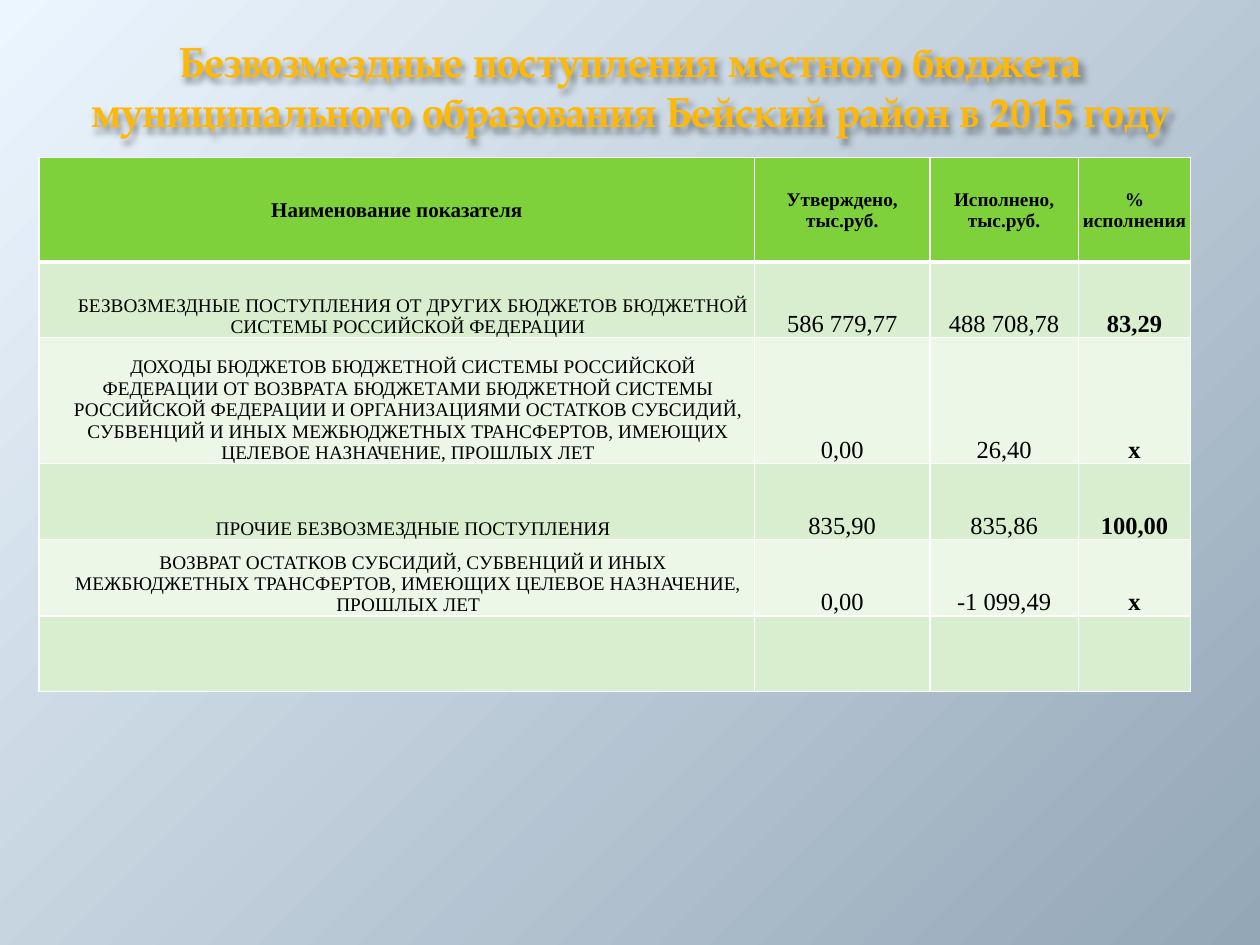
from lxml import etree
from pptx import Presentation
from pptx.dml.color import RGBColor
from pptx.enum.text import MSO_ANCHOR, PP_ALIGN
from pptx.oxml import parse_xml
from pptx.oxml.ns import nsdecls, qn
from pptx.util import Inches, Pt

CENTER = PP_ALIGN.CENTER
TOP, MIDDLE, BOTTOM = MSO_ANCHOR.TOP, MSO_ANCHOR.MIDDLE, MSO_ANCHOR.BOTTOM
BLACK = RGBColor(0x00, 0x00, 0x00)
WHITE = RGBColor(0xFF, 0xFF, 0xFF)
OUTLINE = RGBColor(0xFE, 0xFE, 0xFE)
GOLD = RGBColor(0xFE, 0xB8, 0x0A)
HEADER_GREEN = RGBColor(0x7F, 0xD1, 0x3B)
BAND_GREENS = (RGBColor(0xD8, 0xEE, 0xCE), RGBColor(0xEC, 0xF7, 0xE8))
SKY = RGBColor(0xEC, 0xF6, 0xFF)
SLATE = RGBColor(0x94, 0xA7, 0xB7)
TITLE_FONT, TABLE_FONT = "TeX Gyre Pagella", "Times New Roman"

TITLE = "Безвозмездные поступления местного бюджета муниципального образования Бейский район в 2015 году"
ROWS = [
    ("Наименование показателя", "Утверждено, тыс.руб.", "Исполнено, тыс.руб.", "% исполнения"),
    ("БЕЗВОЗМЕЗДНЫЕ ПОСТУПЛЕНИЯ ОТ ДРУГИХ БЮДЖЕТОВ БЮДЖЕТНОЙ СИСТЕМЫ РОССИЙСКОЙ ФЕДЕРАЦИИ",
     "586 779,77", "488 708,78", "83,29"),
    ("ДОХОДЫ БЮДЖЕТОВ БЮДЖЕТНОЙ СИСТЕМЫ РОССИЙСКОЙ ФЕДЕРАЦИИ ОТ ВОЗВРАТА БЮДЖЕТАМИ "
     "БЮДЖЕТНОЙ СИСТЕМЫ РОССИЙСКОЙ ФЕДЕРАЦИИ И ОРГАНИЗАЦИЯМИ ОСТАТКОВ СУБСИДИЙ, СУБВЕНЦИЙ "
     "И ИНЫХ МЕЖБЮДЖЕТНЫХ ТРАНСФЕРТОВ, ИМЕЮЩИХ ЦЕЛЕВОЕ НАЗНАЧЕНИЕ, ПРОШЛЫХ ЛЕТ",
     "0,00", "26,40", "х"),
    ("ПРОЧИЕ БЕЗВОЗМЕЗДНЫЕ ПОСТУПЛЕНИЯ", "835,90", "835,86", "100,00"),
    ("ВОЗВРАТ ОСТАТКОВ СУБСИДИЙ, СУБВЕНЦИЙ И ИНЫХ МЕЖБЮДЖЕТНЫХ ТРАНСФЕРТОВ, "
     "ИМЕЮЩИХ ЦЕЛЕВОЕ НАЗНАЧЕНИЕ, ПРОШЛЫХ ЛЕТ",
     "0,00", "-1 099,49", "х"),
    ("", "", "", ""),
]
COLUMN_WIDTHS = (5.68, 1.39, 1.18, 0.89)
ROW_HEIGHTS = (0.83, 0.6, 1, 0.6, 0.61, 0.6)


def paint_background(slide):
    """Fill the slide with a gradient spreading from its top left corner."""
    fill = slide.background.fill
    fill.gradient()
    for stop, position, color in zip(fill.gradient_stops, (0, 1), (SKY, SLATE)):
        stop.position = position
        stop.color.rgb = color
    linear = next(slide.background._cSld.iter(qn("a:lin")))
    linear.getparent().replace(linear, parse_xml(
        f'<a:path {nsdecls("a")} path="circle"><a:fillToRect r="100000" b="100000"/></a:path>'))


def format_run(run, font_name, size, color, bold):
    """Set the font of a run."""
    run.font.name, run.font.size, run.font.bold = font_name, Pt(size), bold
    run.font.color.rgb = color


def add_title(slide, left, top, width, height):
    """Place the gold, shadowed title in the given box."""
    title = slide.shapes.title
    title.left, title.top, title.width, title.height = left, top, width, height
    frame = title.text_frame
    frame.text = TITLE
    frame.word_wrap, frame.vertical_anchor = True, TOP
    paragraph = frame.paragraphs[0]
    paragraph.alignment = CENTER
    run = paragraph.runs[0]
    format_run(run, TITLE_FONT, 24, GOLD, True)
    run.font._element.insert(0, parse_xml(
        f'<a:ln {nsdecls("a")} w="{Pt(1.5)}"><a:solidFill><a:srgbClr val="{OUTLINE}"/>'
        '</a:solidFill></a:ln>'))
    title._element.spPr.append(parse_xml(
        f'<a:effectLst {nsdecls("a")}><a:outerShdw blurRad="{Pt(4)}" dist="{Pt(3)}" dir="3600000">'
        '<a:srgbClr val="000000"><a:alpha val="40000"/></a:srgbClr></a:outerShdw></a:effectLst>'))


def set_borders(cell, top_width, bottom_width):
    """Draw white borders around a cell."""
    properties = cell._tc.get_or_add_tcPr()
    widths = {"lnL": 1, "lnR": 1, "lnT": top_width, "lnB": bottom_width}
    for index, (side, width) in enumerate(widths.items()):
        line = etree.Element(qn(f"a:{side}"), w=str(Pt(width)))
        fill = etree.SubElement(line, qn("a:solidFill"))
        etree.SubElement(fill, qn("a:srgbClr"), val=str(WHITE))
        properties.insert(index, line)


def format_cell(cell, text, row, column):
    """Write and style a cell according to its place in the table."""
    header, is_name = row == 0, column == 0
    cell.fill.solid()
    cell.fill.fore_color.rgb = HEADER_GREEN if header else BAND_GREENS[(row - 1) % 2]
    set_borders(cell, 3 if row == 1 else 1, 3 if header else 1)
    cell.vertical_anchor = MIDDLE if header else BOTTOM
    cell.margin_left = Inches(0.19 if is_name and not header else 0.01)
    cell.margin_top = cell.margin_right = Inches(0.01)
    cell.margin_bottom = 0
    cell.text = text
    paragraph = cell.text_frame.paragraphs[0]
    paragraph.alignment = CENTER
    if header:
        size = 12 if is_name else 11
    else:
        size = 11 if is_name else 14
        if is_name:
            paragraph._p.get_or_add_pPr().set("indent", str(Inches(0.08)))
    for run in paragraph.runs:
        format_run(run, TABLE_FONT, size, BLACK, header or column == len(COLUMN_WIDTHS) - 1)


def add_budget_table(slide, left, top, width, height):
    """Place the receipts table in the given box."""
    table = slide.shapes.add_table(
        len(ROWS), len(COLUMN_WIDTHS), left, top, width, height).table
    for column, share in zip(table.columns, COLUMN_WIDTHS):
        column.width = int(width * share / sum(COLUMN_WIDTHS))
    for row, share in zip(table.rows, ROW_HEIGHTS):
        row.height = int(height * share / sum(ROW_HEIGHTS))
    for row, texts in enumerate(ROWS):
        for column, text in enumerate(texts):
            format_cell(table.cell(row, column), text, row, column)


def main():
    """Build and save the presentation."""
    presentation = Presentation()
    presentation.slide_width, presentation.slide_height = Inches(10), Inches(7.5)
    slide = presentation.slides.add_slide(presentation.slide_layouts[5])
    paint_background(slide)
    add_title(slide, Inches(0.55), Inches(0.23), Inches(8.91), Inches(1.31))
    add_budget_table(slide, Inches(0.31), Inches(1.25), Inches(9.14), Inches(4.24))
    presentation.save("out.pptx")


if __name__ == "__main__":
    main()
